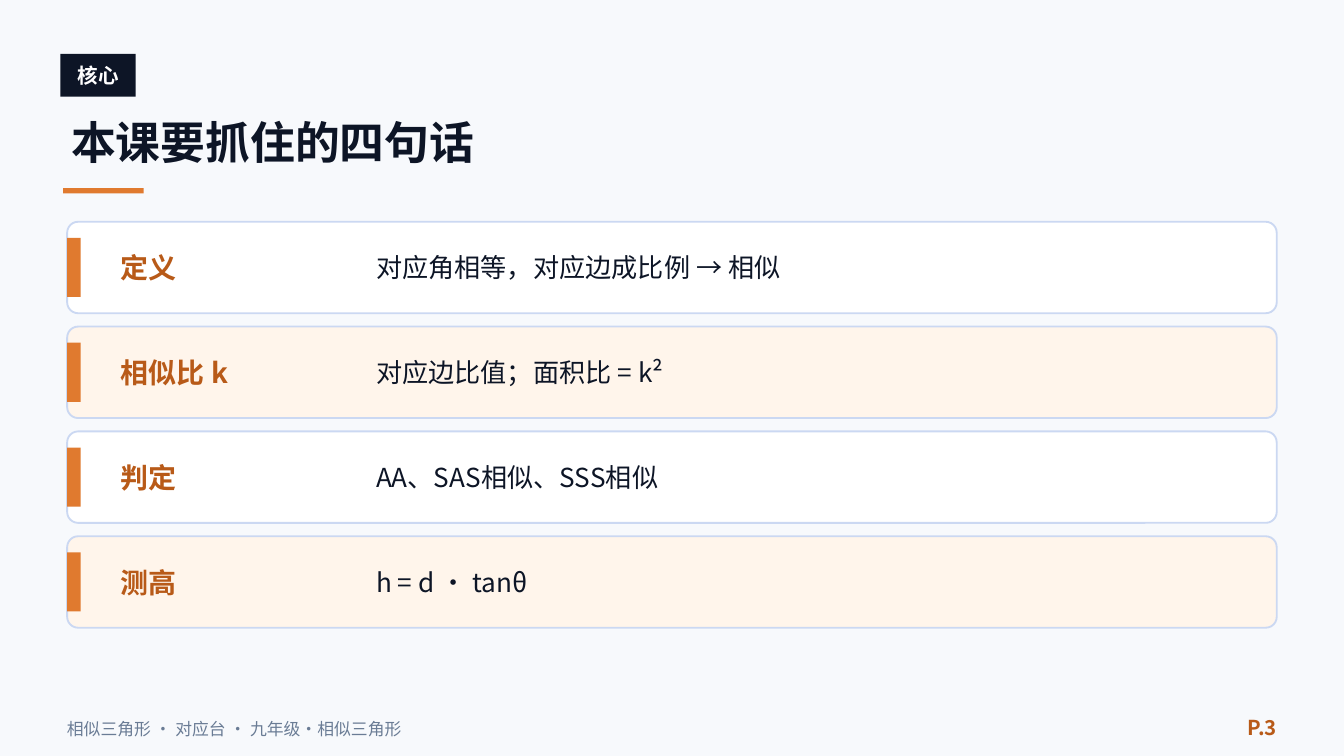
"""Build the slide with the four key statements of the lesson on similar triangles."""
from lxml.etree import SubElement
from pptx import Presentation
from pptx.dml.color import RGBColor
from pptx.enum.shapes import MSO_SHAPE
from pptx.enum.text import MSO_ANCHOR, PP_ALIGN
from pptx.oxml.ns import qn
from pptx.util import Pt

TAG = "核心"
TITLE = "本课要抓住的四句话"
ROWS = [
    ("定义", "对应角相等，对应边成比例 → 相似"),
    ("相似比 k", "对应边比值；面积比 = k²"),
    ("判定", "AA、SAS相似、SSS相似"),
    ("测高", "h = d · tanθ"),
]
FOOTER = "相似三角形 · 对应台 · 九年级·相似三角形"
PAGE = "P.3"

FONT = "Noto Sans CJK SC"
PAPER = RGBColor(0xF7, 0xF9, 0xFC)
INK = RGBColor(0x0D, 0x15, 0x26)
WHITE = RGBColor(0xFF, 0xFF, 0xFF)
CREAM = RGBColor(0xFF, 0xF5, 0xEB)
ORANGE = RGBColor(0xE0, 0x7A, 0x2F)
RUST = RGBColor(0xB8, 0x5A, 0x18)
BORDER = RGBColor(0xCB, 0xD8, 0xF2)
GREY = RGBColor(0x6A, 0x7C, 0x95)

ROW_LEFT, ROW_TOP, ROW_W, ROW_H, ROW_PITCH = 36, 118.8, 648, 49, 56.16
BAR_W, BAR_H = 7.2, 31.7


def add_block(s, box, fill, line=None, kind=MSO_SHAPE.RECTANGLE):
    sp = s.shapes.add_shape(kind, *map(Pt, box))
    sp.shadow.inherit = False
    sp.fill.solid()
    sp.fill.fore_color.rgb = fill
    if line is None:
        sp.line.fill.background()
    else:
        sp.line.color.rgb = line
        sp.line.width = Pt(1)
    return sp


def add_text(s, box, text, size, color, bold=False, align=PP_ALIGN.LEFT):
    tf = s.shapes.add_textbox(*map(Pt, box)).text_frame
    tf.word_wrap = True
    tf.vertical_anchor = MSO_ANCHOR.MIDDLE
    p = tf.paragraphs[0]
    p.alignment = align
    r = p.add_run()
    r.text = text
    r.font.name = FONT
    r.font.size = Pt(size)
    r.font.bold = bold
    r.font.color.rgb = color
    SubElement(r.font._element, qn("a:ea"), typeface=FONT)


def add_row(s, index, label, statement):
    top = ROW_TOP + index * ROW_PITCH
    card = add_block(s, (ROW_LEFT, top, ROW_W, ROW_H), CREAM if index % 2 else WHITE,
                     BORDER, MSO_SHAPE.ROUNDED_RECTANGLE)
    card.adjustments[0] = 0.12
    add_block(s, (ROW_LEFT, top + (ROW_H - BAR_H) / 2, BAR_W, BAR_H), ORANGE)
    add_text(s, (57.6, top, 129.6, ROW_H), label, 15, RUST, bold=True)
    add_text(s, (194.4, top, 468, ROW_H), statement, 14, INK)


def main():
    prs = Presentation()
    prs.slide_width, prs.slide_height = Pt(720), Pt(405)
    s = prs.slides.add_slide(prs.slide_layouts[6])
    s.background.fill.solid()
    s.background.fill.fore_color.rgb = PAPER

    add_block(s, (32.4, 28.8, 40.3, 23), INK)
    add_text(s, (32.4, 28.1, 40.3, 24.5), TAG, 11, WHITE, bold=True, align=PP_ALIGN.CENTER)
    add_text(s, (31, 56.2, 648, 39.6), TITLE, 24, INK, bold=True)
    add_block(s, (33.8, 100.8, 43.2, 2.9), ORANGE)

    for index, (label, statement) in enumerate(ROWS):
        add_row(s, index, label, statement)

    add_text(s, (28.8, 380.2, 518.4, 20.2), FOOTER, 9, GREY)
    add_text(s, (648, 378.7, 43.2, 21.6), PAGE, 11, RUST, bold=True, align=PP_ALIGN.RIGHT)
    prs.save("out.pptx")


if __name__ == "__main__":
    main()
